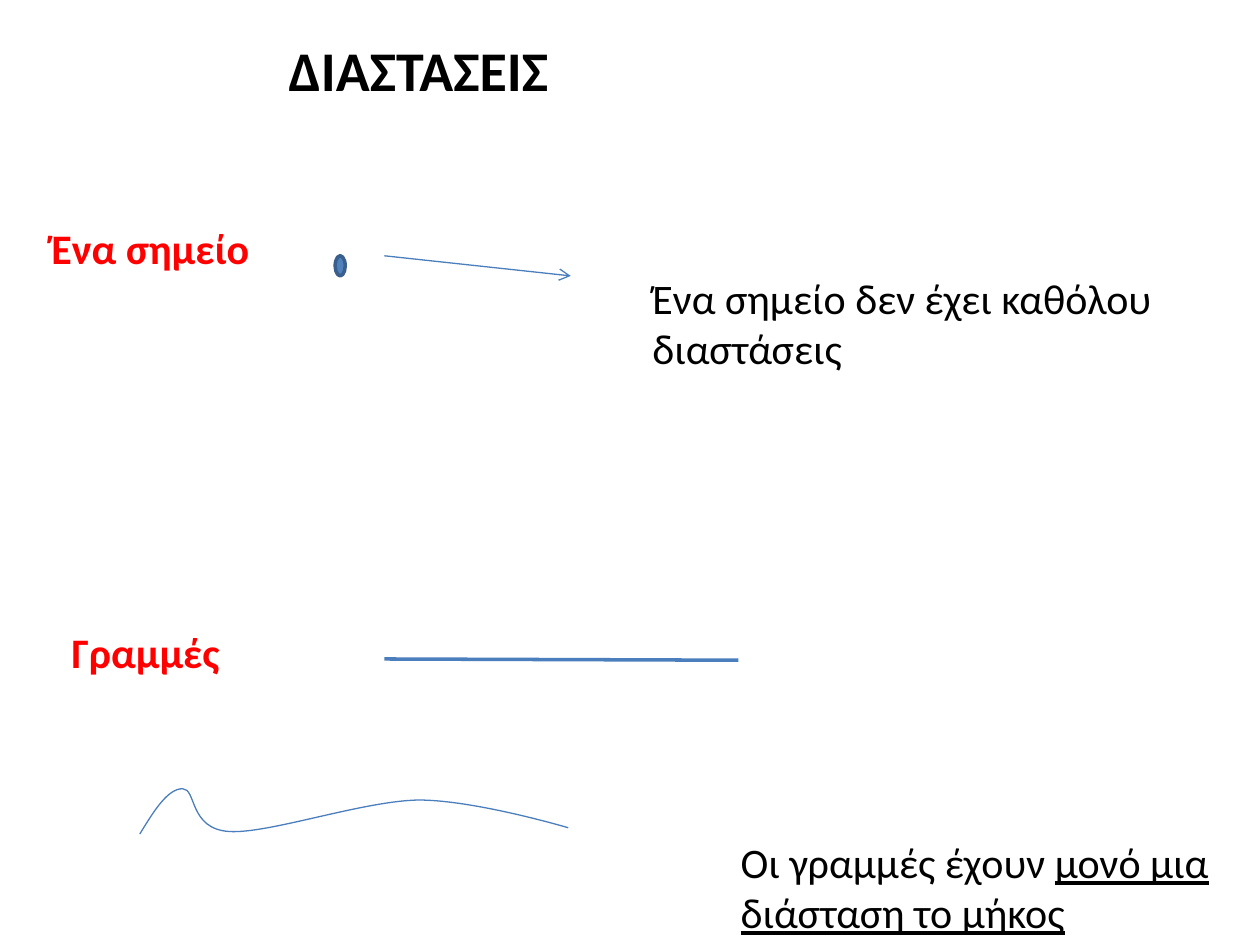
"""Build the slide on the dimensions of a point and of lines."""
from lxml.etree import SubElement
from pptx import Presentation
from pptx.dml.color import RGBColor
from pptx.enum.shapes import MSO_CONNECTOR, MSO_SHAPE
from pptx.enum.text import MSO_ANCHOR, MSO_AUTO_SIZE, PP_ALIGN
from pptx.oxml.ns import qn
from pptx.util import Inches, Pt

BLACK, RED, BLUE = "000000", "FF0000", "4B7EBC"
TITLE = ("ΔΙΑΣΤΑΣΕΙΣ", (2.19, 0.23, 3.52, 0.64))
LABELS = [
    ("Ένα σημείο", (0.31, 1.72, 1.95, 0.5)),
    ("Γραμμές", (0.47, 4.92, 1.95, 0.5)),
]
NOTES = [
    ([("Ένα σημείο δεν έχει καθόλου διαστάσεις", False)], (5.08, 2.11, 4.38, 0.91)),
    ([("Οι γραμμές έχουν ", False), ("μονό μια διάσταση το μήκος", True)],
     (5.78, 6.59, 4.38, 0.91)),
]
POINT = (2.66, 2.03, 0.08, 0.16)
ARROW = (3.05, 2.03, 4.53, 2.19)
STRAIGHT = (3.05, 5.23, 5.86, 5.24)
CURVE_START = (1.11, 6.62)
CURVE = [
    [(1.22, 6.44), (1.33, 6.26), (1.45, 6.26)],
    [(1.56, 6.26), (1.5, 6.58), (1.82, 6.6)],
    [(2.13, 6.62), (2.87, 6.36), (3.32, 6.35)],
    [(3.77, 6.35), (4.51, 6.57), (4.51, 6.57)],
]


def inches(values):
    return [Inches(v) for v in values]


def paint(color_format, color):
    color_format.rgb = RGBColor.from_string(color)


def set_line(s, color, width):
    paint(s.line.color, color)
    s.line.width = Pt(width)


def write(s, runs, size, color, bold=False):
    tf = s.text_frame
    tf.word_wrap = True
    tf.auto_size = MSO_AUTO_SIZE.SHAPE_TO_FIT_TEXT
    tf.vertical_anchor = MSO_ANCHOR.TOP
    p = tf.paragraphs[0]
    p.alignment = PP_ALIGN.LEFT
    for text, underline in runs:
        r = p.add_run()
        r.text = text
        r.font.name, r.font.size, r.font.bold = "Calibri", Pt(size), bold
        if underline:
            r.font.underline = True
        paint(r.font.color, color)


def add_text(slide, box, runs, color, bold=False):
    write(slide.shapes.add_textbox(*inches(box)), runs, 24, color, bold)


def add_line(slide, ends, width, arrow=False):
    s = slide.shapes.add_connector(MSO_CONNECTOR.STRAIGHT, *inches(ends))
    set_line(s, BLUE, width)
    if arrow:
        SubElement(s.line._get_or_add_ln(), qn("a:tailEnd"), type="arrow")
    SubElement(s._element.spPr, qn("a:effectLst"))


def add_curve(slide, start, segments):
    builder = slide.shapes.build_freeform(*inches(start))
    builder.add_line_segments([inches(pt) for seg in segments for pt in seg], close=False)
    s = builder.convert_to_shape()
    s.shadow.inherit = False
    s.fill.background()
    set_line(s, BLUE, 0.75)
    outline = next(s._element.iter(qn("a:moveTo"))).getparent()
    steps = outline.findall(qn("a:lnTo"))
    for i in range(0, len(steps), 3):
        bezier = SubElement(outline, qn("a:cubicBezTo"))
        for step in steps[i:i + 3]:
            bezier.append(step[0])
            outline.remove(step)


def main():
    prs = Presentation()
    prs.slide_width, prs.slide_height = Inches(10), Inches(7.5)
    slide = prs.slides.add_slide(prs.slide_layouts[5])

    text, box = TITLE
    title = slide.shapes.title
    title.left, title.top, title.width, title.height = inches(box)
    write(title, [(text, False)], 32, BLACK, True)

    for text, box in LABELS:
        add_text(slide, box, [(text, False)], RED, True)
    for runs, box in NOTES:
        add_text(slide, box, runs, BLACK)

    point = slide.shapes.add_shape(MSO_SHAPE.OVAL, *inches(POINT))
    point.shadow.inherit = False
    point.fill.solid()
    paint(point.fill.fore_color, "4F81BD")
    set_line(point, "3A5F8C", 2)

    add_line(slide, ARROW, 0.75, arrow=True)
    add_line(slide, STRAIGHT, 2)
    add_curve(slide, CURVE_START, CURVE)
    prs.save("out.pptx")


if __name__ == "__main__":
    main()
